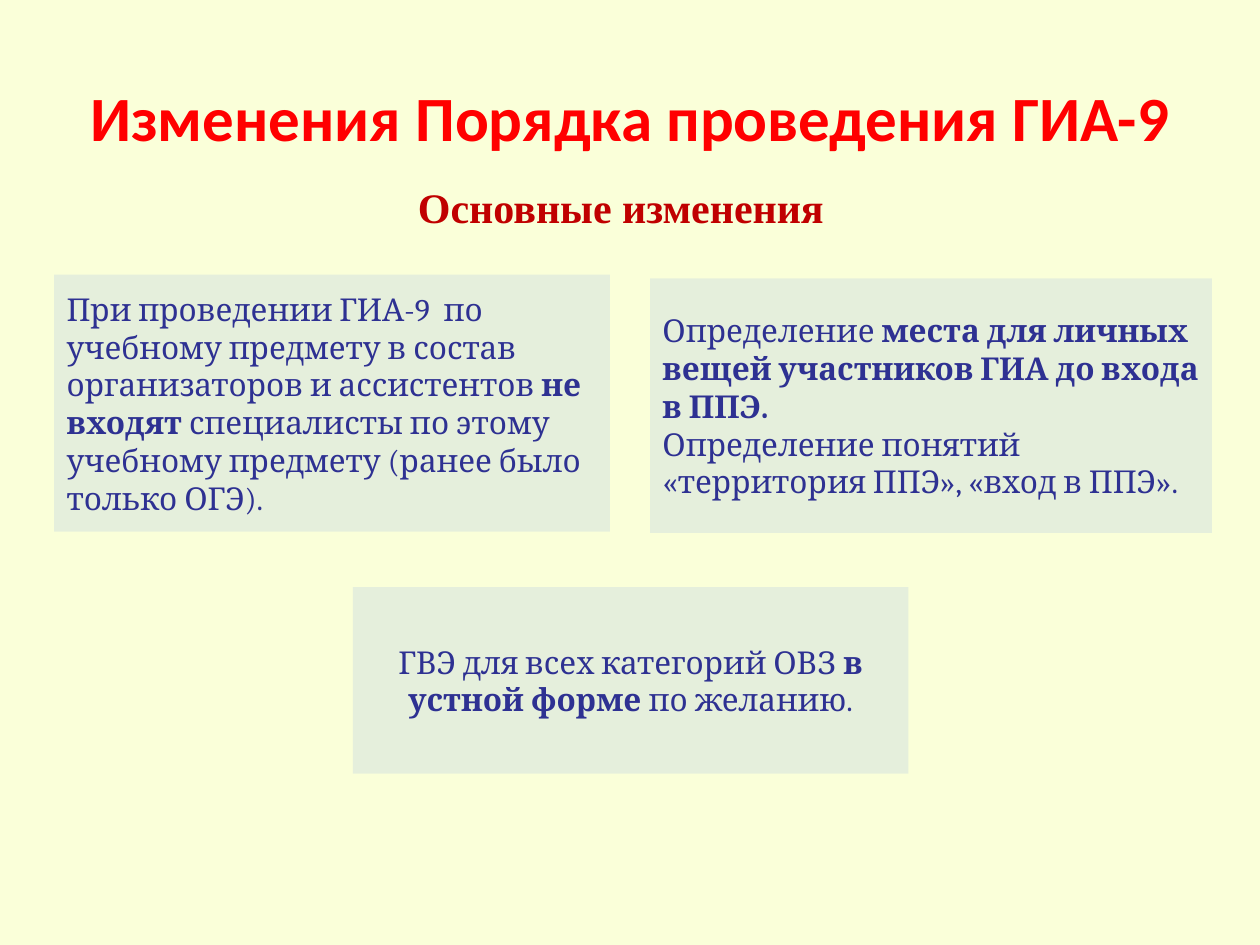
import pptx
import pptx.util
import pptx.dml.color
import pptx.enum.shapes
import pptx.enum.text
from lxml import etree
from pptx.oxml.ns import qn

Inches = pptx.util.Inches
ALIGN = pptx.enum.text.PP_ALIGN
ANCHOR = pptx.enum.text.MSO_ANCHOR

BACKGROUND, PANEL, PANEL_TEXT = "FAFFD9", "B9CDE5", "2E3192"
PANEL_OPACITY = 31  # percent

# text, box, wrap, anchor, font, size, colour
HEADINGS = [
    ("Изменения Порядка проведения ГИА-9", (0.5, 0.3, 9, 1.25), True,
     ANCHOR.MIDDLE, "Calibri", 36, "FF0000"),
    ("Основные изменения ", (3.19, 1.39, 3.56, 0.5), False,
     ANCHOR.TOP, "Times New Roman", 24, "C00000"),
]

# box, alignment, paragraphs of (text, bold) runs
PANELS = [
    ((0.43, 2.18, 4.41, 2.04), ALIGN.LEFT, [
        [("При проведении ГИА-9  по учебному предмету в состав "
          "организаторов и ассистентов ", False),
         ("не входят ", True),
         ("специалисты по этому учебному предмету (ранее было только ОГЭ).", False)],
    ]),
    ((2.8, 4.66, 4.41, 1.48), ALIGN.CENTER, [
        [("ГВЭ для всех категорий ОВЗ ", False),
         ("в устной форме ", True),
         ("по желанию.", False)],
    ]),
    ((5.16, 2.21, 4.46, 2.02), ALIGN.LEFT, [
        [("Определение ", False),
         ("места для личных вещей участников ГИА до входа в ППЭ.", True)],
        [("Определение понятий «территория ППЭ», «вход в ППЭ».", False)],
    ]),
]


def rgb(value):
    return pptx.dml.color.RGBColor.from_string(value)


def fill_solid(fill, color):
    fill.solid()
    fill.fore_color.rgb = rgb(color)


def write(tf, paragraphs, align, font, size, color):
    """Fill a text frame with paragraphs of (text, bold) runs."""
    for i, runs in enumerate(paragraphs):
        p = tf.add_paragraph() if i else tf.paragraphs[0]
        p.alignment = align
        for text, bold in runs:
            r = p.add_run()
            r.text = text
            r.font.name, r.font.size, r.font.bold = font, pptx.util.Pt(size), bold
            r.font.color.rgb = rgb(color)


def add_heading(slide, text, box, wrap, anchor, font, size, color):
    tf = slide.shapes.add_textbox(*map(Inches, box)).text_frame
    tf.word_wrap, tf.vertical_anchor = wrap, anchor
    write(tf, [[(text, True)]], ALIGN.CENTER, font, size, color)


def add_panel(slide, box, align, paragraphs):
    sp = slide.shapes.add_shape(pptx.enum.shapes.MSO_SHAPE.RECTANGLE, *map(Inches, box))
    sp.shadow.inherit = False
    sp.line.fill.background()
    fill_solid(sp.fill, PANEL)
    color = sp._element.spPr.find(".//" + qn("a:srgbClr"))
    etree.SubElement(color, qn("a:alpha"), val=str(PANEL_OPACITY * 1000))
    tf = sp.text_frame
    tf.word_wrap, tf.vertical_anchor = True, ANCHOR.MIDDLE
    write(tf, paragraphs, align, "Cambria", 18, PANEL_TEXT)


def main():
    prs = pptx.Presentation()
    prs.slide_width, prs.slide_height = Inches(10), Inches(7.5)
    slide = prs.slides.add_slide(prs.slide_layouts[6])
    fill_solid(slide.background.fill, BACKGROUND)
    for heading in HEADINGS:
        add_heading(slide, *heading)
    for panel in PANELS:
        add_panel(slide, *panel)
    prs.save("out.pptx")


if __name__ == "__main__":
    main()
